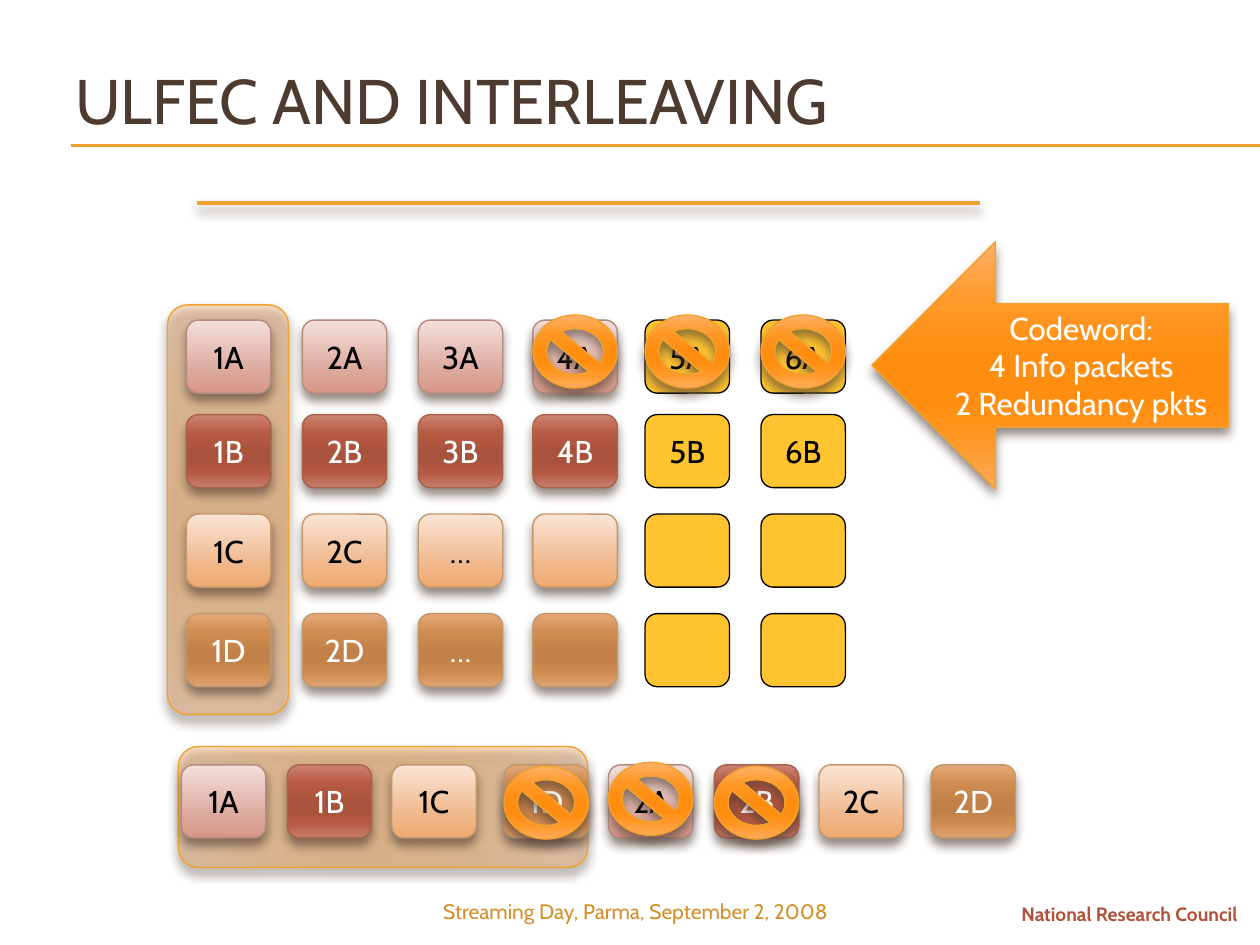
from lxml import etree
from pptx import Presentation
from pptx.dml.color import RGBColor
from pptx.enum.shapes import MSO_CONNECTOR, MSO_SHAPE
from pptx.enum.text import MSO_ANCHOR, PP_ALIGN
from pptx.oxml.ns import qn
from pptx.util import Inches, Pt

CELL = MSO_SHAPE.FLOWCHART_ALTERNATE_PROCESS
BAND = MSO_SHAPE.ROUNDED_RECTANGLE
LOST = MSO_SHAPE.NO_SYMBOL
ARROW = MSO_SHAPE.LEFT_ARROW
STRAIGHT = MSO_CONNECTOR.STRAIGHT
CENTER, LEFT = PP_ALIGN.CENTER, PP_ALIGN.LEFT
MIDDLE, TOP = MSO_ANCHOR.MIDDLE, MSO_ANCHOR.TOP

FONT = "Cabin"
GOLD, BROWN, BLACK, WHITE = "F0A22E", "4E3B30", "000000", "FFFFFF"
ORANGE = [(0, "FFB16A"), (25, "FF9826"), (50, "FF8D0F"),
          (65, "FF8D0F"), (80, "FF9724"), (100, "FFAA5C")]
COUNCIL = [(0, "E19786"), (75, "B05239"), (100, "A7340D")]
PACKET_STYLES = {
    "A": ([(0, "F3E0DB"), (72, "DCA79B"), (100, "D89787")], "B58B80", BLACK),
    "B": ([(0, "CD8473"), (25, "B75B42"), (50, "AA533C"),
           (65, "AA533C"), (80, "B65B42"), (100, "C77D6B")], "A5644E", WHITE),
    "C": ([(0, "FAE4D5"), (72, "EFB688"), (100, "EFAA6F")], "C3986D", BLACK),
    "D": ([(0, "E4A97A"), (25, "D08D50"), (50, "C18148"),
           (65, "C18148"), (80, "CF8C4F"), (100, "DEA372")], "C3986D", WHITE),
}
CELL_SIZE = (0.67, 0.58)
COLUMNS = [1.48, 2.4, 3.32, 4.23, 5.12, 6.04]
INFO_COLUMNS = 4
ROWS = {"A": 2.54, "B": 3.29, "C": 4.08, "D": 4.87}
LABELS = {
    "A": ["1A", "2A", "3A", "4A", "5A", "6A"],
    "B": ["1B", "2B", "3B", "4B", "5B", "6B"],
    "C": ["1C", "2C", "…", "", "", ""],
    "D": ["1D", "2D", "…", "", "", ""],
}
STREAM_TOP = 6.07
STREAM_COLUMNS = [start + step for start in (1.44, 4.83)
                  for step in (0, 0.84, 1.67, 2.56)]
STREAM_LABELS = [f"{number}{row}" for number in (1, 2) for row in ROWS]
LOST_STREAM = {3: 6.08, 4: 6.05, 5: 6.08}


def color(code):
    """Turn a hex string into a colour."""
    return RGBColor.from_string(code)


def add_color(parent, code, alpha):
    """Append a colour with an opacity percentage to an XML element."""
    node = etree.SubElement(parent, qn("a:srgbClr"), val=code)
    if alpha < 100:
        etree.SubElement(node, qn("a:alpha"), val=str(alpha * 1000))


def paint_gradient(fill, owner, stops, alpha=100):
    """Give a fill a top-down gradient with any number of stops."""
    fill.gradient()
    fill.gradient_angle = 270
    stop_list = owner.find(qn("a:gradFill")).find(qn("a:gsLst"))
    for old in list(stop_list):
        stop_list.remove(old)
    for position, code in stops:
        stop = etree.SubElement(stop_list, qn("a:gs"), pos=str(position * 1000))
        add_color(stop, code, alpha)


def cast_shadow(effects, alpha=60):
    """Add the soft brown shadow below an object."""
    shadow = etree.SubElement(
        effects, qn("a:outerShdw"), blurRad=str(Pt(6)), dist=str(Pt(4)),
        dir="5400000", algn="ctr", rotWithShape="0")
    add_color(shadow, BROWN, alpha)


def write(box, lines, size, code, align=CENTER, anchor=MIDDLE, wrap=True):
    """Write paragraphs of one style into a box."""
    frame = box.text_frame
    frame.text = "\n".join(lines)
    frame.word_wrap = wrap
    frame.vertical_anchor = anchor
    for para in frame.paragraphs:
        para.alignment = align
        for span in para.runs:
            span.font.name = FONT
            span.font.size = Pt(size)
            span.font.color.rgb = color(code)


def add_text(page, area, line, size, code, **layout):
    """Add a text box with one line and return its run."""
    box = page.shapes.add_textbox(*map(Inches, area))
    write(box, [line], size, code, **layout)
    return box.text_frame.paragraphs[0].runs[0]


def add_rule(page, left, right, top, width, shadow=False):
    """Add a horizontal gold line."""
    rule = page.shapes.add_connector(
        STRAIGHT, Inches(left), Inches(top), Inches(right), Inches(top))
    rule.line.color.rgb = color(GOLD)
    rule.line.width = Pt(width)
    effects = etree.SubElement(rule._element.spPr, qn("a:effectLst"))
    if shadow:
        cast_shadow(effects)


def add_glossy(shapes, kind, area, stops=ORANGE, edge=GOLD, alpha=100,
               shadow_alpha=60):
    """Add a preset shape with a gradient, a thin edge and a shadow."""
    shape = shapes.add_shape(kind, *map(Inches, area))
    properties = shape._element.spPr
    paint_gradient(shape.fill, properties, stops, alpha)
    shape.line.color.rgb = color(edge)
    shape.line.width = Pt(0.79)
    shape.shadow.inherit = False
    cast_shadow(properties.find(qn("a:effectLst")), shadow_alpha)
    return shape


def add_packet(shapes, left, top, row, label):
    """Add an information packet in the style of its row."""
    stops, edge, ink = PACKET_STYLES[row]
    packet = add_glossy(shapes, CELL, (left, top, *CELL_SIZE), stops, edge)
    if label:
        write(packet, [label], 18, ink, wrap=False)


def add_redundancy(shapes, left, top, label):
    """Add a flat yellow redundancy packet."""
    packet = shapes.add_shape(CELL, *map(Inches, (left, top, *CELL_SIZE)))
    packet.shadow.inherit = False
    packet.fill.solid()
    packet.fill.fore_color.rgb = color("FFC42F")
    packet.line.color.rgb = color(BLACK)
    packet.line.width = Pt(0.75)
    if label:
        write(packet, [label], 18, BLACK, wrap=False)


def add_code_grid(page):
    """Add the grid of codewords, one per row."""
    shapes = page.shapes.add_group_shape().shapes
    for row, top in ROWS.items():
        for index, (left, label) in enumerate(zip(COLUMNS, LABELS[row])):
            if index < INFO_COLUMNS:
                add_packet(shapes, left, top, row, label)
            else:
                add_redundancy(shapes, left, top, label)


def add_stream(page):
    """Add the interleaved packets in sending order."""
    shapes = page.shapes.add_group_shape().shapes
    for left, label in zip(STREAM_COLUMNS, STREAM_LABELS):
        add_packet(shapes, left, STREAM_TOP, label[-1], label)


def add_losses(page, places):
    """Mark lost packets with prohibition signs."""
    shapes = page.shapes.add_group_shape().shapes
    for left, top in places:
        add_glossy(shapes, LOST, (left, top, *CELL_SIZE))


def main():
    """Build the slide and save it."""
    deck = Presentation()
    deck.slide_width, deck.slide_height = Inches(10), Inches(7.5)
    page = deck.slides.add_slide(deck.slide_layouts[6])

    for top in (1.15, 1.16):
        add_rule(page, 0.56, 10, top, 0.75)
    council = add_text(page, (8, 7.11, 1.93, 0.29), "National Research Council",
                       11, "B05239", anchor=TOP, wrap=False)
    council.font.bold = True
    paint_gradient(council.font.fill, council.font._element, COUNCIL)

    for left, top, turn in ((2.56, 4.78, 90), (1.33, 2.42, 0)):
        band = add_glossy(page.shapes, BAND, (left, top, 0.96, 3.25),
                          alpha=31, shadow_alpha=100)
        band.rotation = turn
    add_text(page, (0.5, 0.33, 9.5, 0.92), "ULFEC AND INTERLEAVING",
             36, BROWN, align=LEFT)

    add_code_grid(page)
    add_stream(page)
    add_losses(page, [(left, 2.5) for left in COLUMNS[3:]])
    add_losses(page, [(STREAM_COLUMNS[index], top)
                      for index, top in LOST_STREAM.items()])

    add_rule(page, 1.56, 7.78, 1.61, 2, shadow=True)
    add_text(page, (3.17, 7.08, 3.75, 0.32),
             "Streaming Day, Parma, September 2, 2008", 12, "D48F29", anchor=TOP)
    arrow = add_glossy(page.shapes, ARROW, (6.92, 1.92, 2.83, 1.96))
    write(arrow, ["Codeword:", "4 Info packets", "2 Redundancy pkts"], 18, WHITE)
    deck.save("out.pptx")


if __name__ == "__main__":
    main()
